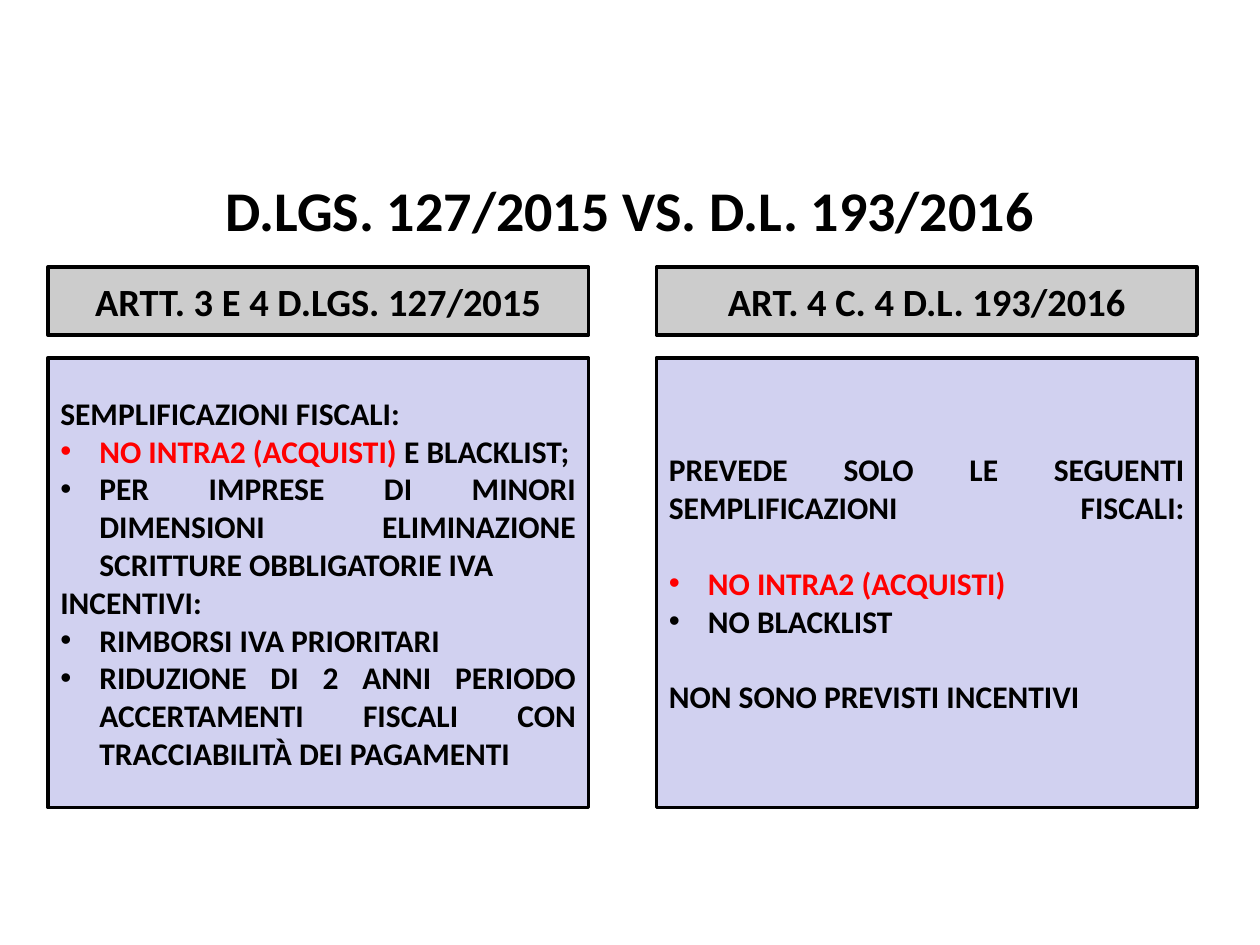
"""Build a slide comparing the tax measures of D.Lgs. 127/2015 and D.L. 193/2016."""
from lxml import etree
from pptx import Presentation
from pptx.dml.color import RGBColor
from pptx.enum.shapes import MSO_SHAPE
from pptx.enum.text import MSO_ANCHOR, PP_ALIGN
from pptx.oxml.ns import qn
from pptx.util import Inches, Pt

RECT = MSO_SHAPE.RECTANGLE
MIDDLE = MSO_ANCHOR.MIDDLE
CENTER, JUSTIFY = PP_ALIGN.CENTER, PP_ALIGN.JUSTIFY
COLORS = {"black": "000000", "red": "FF0000", "header": "CCCCCC", "body": "D1D1F0"}
FONT = "Calibri"


def add_run(p, text, size, color="black"):
    r = p.add_run()
    r.text = text
    r.font.name, r.font.size, r.font.bold = FONT, Pt(size), True
    r.font.color.rgb = RGBColor.from_string(COLORS[color])


def add_box(s, left, top, height, fill):
    sp = s.shapes.add_shape(RECT, Inches(left), Inches(top), Inches(4.29), Inches(height))
    sp.shadow.inherit = False
    sp.fill.solid()
    sp.fill.fore_color.rgb = RGBColor.from_string(COLORS[fill])
    sp.line.color.rgb = RGBColor.from_string(COLORS["black"])
    sp.line.width = Pt(2)
    tf = sp.text_frame
    tf.word_wrap = True
    tf.vertical_anchor = MIDDLE
    return tf


prs = Presentation()
prs.slide_width, prs.slide_height = Inches(10), Inches(7.5)
s = prs.slides.add_slide(prs.slide_layouts[5])

title = s.shapes.title
title.left, title.top, title.width, title.height = Inches(0), Inches(1.36), Inches(10), Inches(0.6)
title.text_frame.vertical_anchor = MIDDLE
p = title.text_frame.paragraphs[0]
p.alignment = CENTER
add_run(p, "D.LGS. 127/2015 VS. D.L. 193/2016", 32)

columns = [
    (0.38, "ARTT. 3 E 4 D.LGS. 127/2015", [
        (False, 0, [("SEMPLIFICAZIONI FISCALI:", "black")]),
        (True, 0, [("NO INTRA2 (ACQUISTI)", "red"), (" E BLACKLIST;", "black")]),
        (True, 0, [("PER IMPRESE DI MINORI DIMENSIONI ELIMINAZIONE "
                    "SCRITTURE OBBLIGATORIE IVA", "black")]),
        (False, 0, [("INCENTIVI:", "black")]),
        (True, 0, [("RIMBORSI IVA PRIORITARI", "black")]),
        (True, 0, [("RIDUZIONE DI 2 ANNI PERIODO ACCERTAMENTI FISCALI CON "
                    "TRACCIABILITÀ DEI PAGAMENTI", "black")]),
    ]),
    (5.21, "ART. 4 C. 4 D.L. 193/2016", [
        (False, 0, [("PREVEDE SOLO LE SEGUENTI SEMPLIFICAZIONI FISCALI:\v", "black")]),
        (True, 0, [("NO INTRA2 (ACQUISTI)", "red")]),
        (True, 0, [("NO BLACKLIST", "black")]),
        (False, 21.6, [("NON SONO PREVISTI INCENTIVI", "black")]),
    ]),
]

for left, heading, paragraphs in columns:
    p = add_box(s, left, 2.12, 0.54, "header").paragraphs[0]
    p.alignment = CENTER
    add_run(p, heading, 22)

    tf = add_box(s, left, 2.84, 3.57, "body")
    for i, (bulleted, space, runs) in enumerate(paragraphs):
        p = tf.add_paragraph() if i else tf.paragraphs[0]
        p.alignment = JUSTIFY
        if space:
            p.space_before = Pt(space)
        if bulleted:
            pPr = p._p.get_or_add_pPr()
            pPr.set("marL", str(Inches(0.31)))
            pPr.set("indent", str(-Inches(0.31)))
            etree.SubElement(pPr, qn("a:buFont")).set("typeface", "Arial")
            etree.SubElement(pPr, qn("a:buChar")).set("char", "•")
        for text, color in runs:
            add_run(p, text.rstrip("\v"), 18, color)
            if text.endswith("\v"):
                p.add_line_break()

prs.save("out.pptx")
